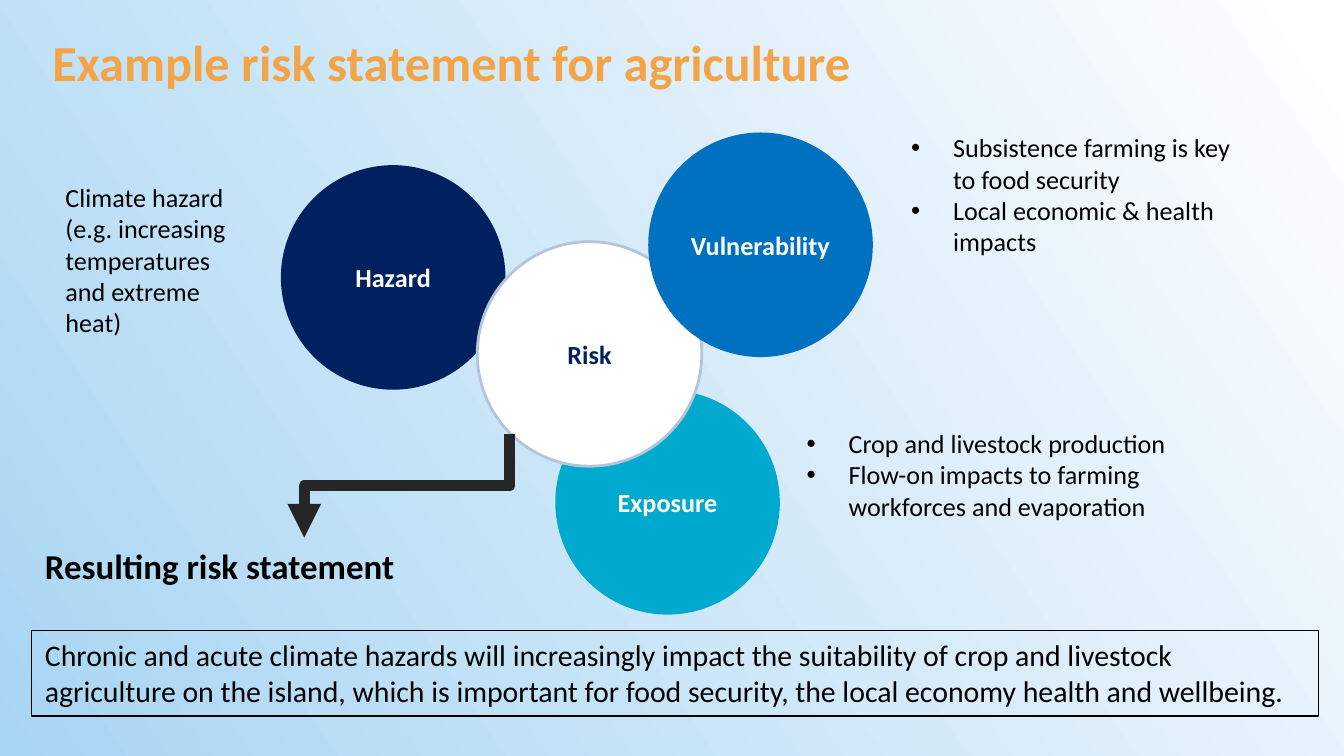
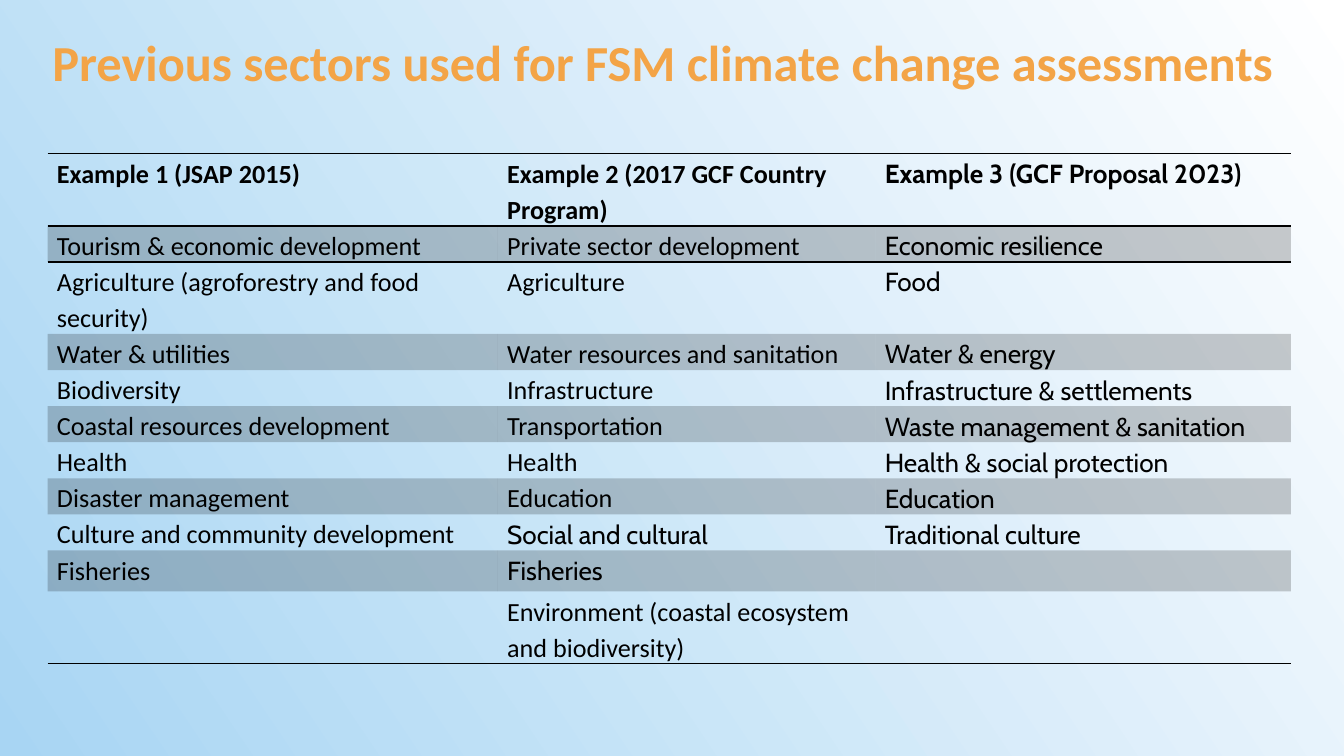
from lxml import etree
from pptx import Presentation
from pptx.dml.color import RGBColor
from pptx.enum.shapes import MSO_CONNECTOR, MSO_SHAPE
from pptx.enum.text import MSO_ANCHOR, MSO_AUTO_SIZE, PP_ALIGN
from pptx.oxml.ns import qn
from pptx.util import Pt

ELLIPSE, RECTANGLE = MSO_SHAPE.OVAL, MSO_SHAPE.RECTANGLE
ELBOW = MSO_CONNECTOR.ELBOW
TOP, MIDDLE = MSO_ANCHOR.TOP, MSO_ANCHOR.MIDDLE
LEFT, CENTER = PP_ALIGN.LEFT, PP_ALIGN.CENTER
GROW = MSO_AUTO_SIZE.SHAPE_TO_FIT_TEXT

WHITE = RGBColor(0xFF, 0xFF, 0xFF)
BLACK = RGBColor(0x00, 0x00, 0x00)
SKY = RGBColor(0xA8, 0xD5, 0xF3)
ORANGE = RGBColor(0xF3, 0xA4, 0x47)
NAVY = RGBColor(0x00, 0x20, 0x60)
BLUE = RGBColor(0x00, 0x70, 0xC0)
TEAL = RGBColor(0x00, 0xA9, 0xCE)
PALE_RIM = RGBColor(0xB3, 0xC5, 0xDA)
CHARCOAL = RGBColor(0x26, 0x26, 0x26)

BODY_FONT, ALT_FONT = "Calibri", "Cabin"
BODY_SIZE = 14
BULLET_INDENT = 22.5
DIAMETER = 120.3
ROW_HEIGHT = 19.3
EMPTY_CELL_HEIGHT = 22
NO_STYLE = "{2D5ABB26-0587-4C30-8999-92F81FD0307C}"

# Circles: label, left, top, fill, text colour, rim; from back to front
CIRCLES = [
    ("Hazard", 150.5, 88.5, NAVY, WHITE, None),
    ("Exposure", 297.5, 209, TEAL, WHITE, None),
    ("Risk", 255.7, 129.5, WHITE, NAVY, PALE_RIM),
    ("Vulnerability", 347.3, 71, BLUE, WHITE, None),
]

SECTORS = [
    ("Example 1 (JSAP 2015)", "Example 2 (2017 GCF Country Program)",
     "Example 3 (GCF Proposal 2023)"),
    ("Tourism & economic development", "Private sector development",
     "Economic resilience"),
    ("Agriculture (agroforestry and food security)", "Agriculture", "Food"),
    ("Water & utilities", "Water resources and sanitation", "Water & energy"),
    ("Biodiversity", "Infrastructure", "Infrastructure & settlements"),
    ("Coastal resources development", "Transportation",
     "Waste management & sanitation"),
    ("Health", "Health", "Health & social protection"),
    ("Disaster management", "Education", "Education"),
    ("Culture and community development", "Social and cultural",
     "Traditional culture"),
    ("Fisheries", "Fisheries", ""),
    ("", "Environment (coastal ecosystem and biodiversity)", ""),
]
COLUMN_WIDTHS = (241.2, 202.3, 222.5)
TWO_LINE_ROWS = (0, 2, 10)
ALT_FONT_CELLS = {(8, 1), (9, 1)}


def add_child(parent, tag, **attributes):
    return etree.SubElement(parent, qn(tag), attributes)


def write(frame, lines, size=BODY_SIZE, color=BLACK, bold=False,
          font=BODY_FONT, align=LEFT):
    frame.text = "\n".join(lines)
    for para in frame.paragraphs:
        para.alignment = align
        for span in para.runs:
            span.font.name = font
            span.font.size = Pt(size)
            span.font.bold = bold
            span.font.color.rgb = color


def clear_margins(frame):
    frame.margin_left = frame.margin_right = 0
    frame.margin_top = frame.margin_bottom = 0


def add_page(deck, title):
    page = deck.slides.add_slide(deck.slide_layouts[6])
    fill = page.background.fill
    fill.gradient()
    fill.gradient_angle = 214
    for stop, color in zip(fill.gradient_stops, (WHITE, SKY)):
        stop.color.rgb = color
    box = add_text(page, (28, 16.6, 666, 50), [title], size=27, color=ORANGE, bold=True)
    box.text_frame.auto_size = MSO_AUTO_SIZE.NONE
    clear_margins(box.text_frame)
    return page


def add_text(page, bounds, lines, **style):
    box = page.shapes.add_textbox(*map(Pt, bounds))
    box.text_frame.word_wrap = True
    box.text_frame.auto_size = GROW
    write(box.text_frame, lines, **style)
    return box


def add_bullets(page, bounds, lines):
    box = add_text(page, bounds, lines)
    for para in box.text_frame.paragraphs:
        properties = para._p.get_or_add_pPr()
        properties.set("marL", str(Pt(BULLET_INDENT)))
        properties.set("indent", str(-Pt(BULLET_INDENT)))
        add_child(properties, "a:buFont", typeface="Arial")
        add_child(properties, "a:buChar", char="•")


def add_circle(group, label, left, top, fill, color, rim):
    circle = group.shapes.add_shape(ELLIPSE, Pt(left), Pt(top), Pt(DIAMETER), Pt(DIAMETER))
    circle.shadow.inherit = False
    circle.fill.solid()
    circle.fill.fore_color.rgb = fill
    if rim is None:
        circle.line.fill.background()
    else:
        circle.line.color.rgb = rim
        circle.line.width = Pt(1.5)
    frame = circle.text_frame
    frame.word_wrap = True
    frame.vertical_anchor = MIDDLE
    clear_margins(frame)
    write(frame, [label], color=color, bold=True, align=CENTER)


def add_framed_text(page, bounds, lines, size):
    box = page.shapes.add_shape(RECTANGLE, *map(Pt, bounds))
    box.shadow.inherit = False
    box.fill.background()
    box.line.color.rgb = BLACK
    box.line.width = Pt(0.75)
    box.text_frame.word_wrap = True
    box.text_frame.auto_size = GROW
    box.text_frame.vertical_anchor = TOP
    write(box.text_frame, lines, size=size)


def add_down_elbow(page, start, end):
    """Elbow arrow that leaves downwards: a quarter turn of the sideways one."""
    middle_x, middle_y = (start[0] + end[0]) / 2, (start[1] + end[1]) / 2
    half_width, half_height = (end[1] - start[1]) / 2, (start[0] - end[0]) / 2
    arrow = page.shapes.add_connector(
        ELBOW, Pt(middle_x - half_width), Pt(middle_y - half_height),
        Pt(middle_x + half_width), Pt(middle_y + half_height))
    arrow.line.color.rgb = CHARCOAL
    arrow.line.width = Pt(6)
    properties = arrow._element.spPr
    properties.find(qn("a:xfrm")).set("rot", str(90 * 60000))
    add_child(properties.find(qn("a:ln")), "a:tailEnd", type="triangle")
    add_child(properties, "a:effectLst")


def add_border(cell, tag):
    line = add_child(cell._tc.get_or_add_tcPr(), tag, w=str(Pt(1)))
    add_child(add_child(line, "a:solidFill"), "a:srgbClr", val=str(BLACK))


def format_cell(cell, row, column, text):
    cell.margin_left = cell.margin_right = Pt(5)
    cell.margin_top = cell.margin_bottom = 0
    last = len(SECTORS) - 1

    # Rules above and below the header and under the last row
    if row <= 1:
        add_border(cell, "a:lnT")
    if row in (0, last):
        add_border(cell, "a:lnB")

    # Translucent band on every second row
    if row % 2:
        cell.fill.solid()
        cell.fill.fore_color.rgb = BLACK
        color = cell._tc.tcPr.find(qn("a:solidFill")).find(qn("a:srgbClr"))
        add_child(color, "a:alpha", val="20000")
    else:
        cell.fill.background()

    if text:
        alternate = column == 2 and row < last or (row, column) in ALT_FONT_CELLS
        write(cell.text_frame, [text], bold=row == 0,
              font=ALT_FONT if alternate else BODY_FONT)
        para = cell.text_frame.paragraphs[0]
        para.line_spacing = 1.15
        para.space_after = Pt(10)


def add_sector_table(page, left, top):
    heights = [ROW_HEIGHT * 2 if row in TWO_LINE_ROWS
               else ROW_HEIGHT if all(texts) else EMPTY_CELL_HEIGHT
               for row, texts in enumerate(SECTORS)]
    holder = page.shapes.add_table(
        len(SECTORS), len(COLUMN_WIDTHS), Pt(left), Pt(top),
        Pt(sum(COLUMN_WIDTHS)), Pt(sum(heights)))
    table = holder.table
    table.first_row = table.horz_banding = False
    table._tbl.tblPr.find(qn("a:tableStyleId")).text = NO_STYLE
    for column, width in zip(table.columns, COLUMN_WIDTHS):
        column.width = Pt(width)
    for row, texts in enumerate(SECTORS):
        table.rows[row].height = Pt(heights[row])
        for column, text in enumerate(texts):
            format_cell(table.cell(row, column), row, column, text)


def build_risk_page(deck):
    page = add_page(deck, "Example risk statement for agriculture")
    group = page.shapes.add_group_shape()
    for circle in CIRCLES:
        add_circle(group, *circle)

    # Notes beside the circles
    add_text(page, (28, 93.6, 112.3, 92),
             ["Climate hazard (e.g. increasing temperatures and extreme heat)"])
    add_bullets(page, (425, 225.5, 250.5, 58),
                ["Crop and livestock production",
                 "Flow-on impacts to farming workforces and evaporation"])
    add_bullets(page, (481, 67, 194.5, 75),
                ["Subsistence farming is key to food security",
                 "Local economic & health impacts"])

    # Resulting statement
    add_text(page, (17, 288, 292, 30), ["Resulting risk statement"],
             size=18.7, bold=True)
    add_framed_text(
        page, (17, 337.7, 689.5, 46),
        ["Chronic and acute climate hazards will increasingly impact the "
         "suitability of crop and livestock agriculture on the island, which is "
         "important for food security, the local economy health and wellbeing."],
        size=16)
    add_down_elbow(page, (273, 232.5), (163, 288))


def build_sector_page(deck):
    page = add_page(deck, "Previous sectors used for FSM climate change assessments")
    add_sector_table(page, 25.5, 82.3)


def main():
    deck = Presentation()
    deck.slide_width, deck.slide_height = Pt(720), Pt(405)
    build_risk_page(deck)
    build_sector_page(deck)
    deck.save("out.pptx")


if __name__ == "__main__":
    main()
